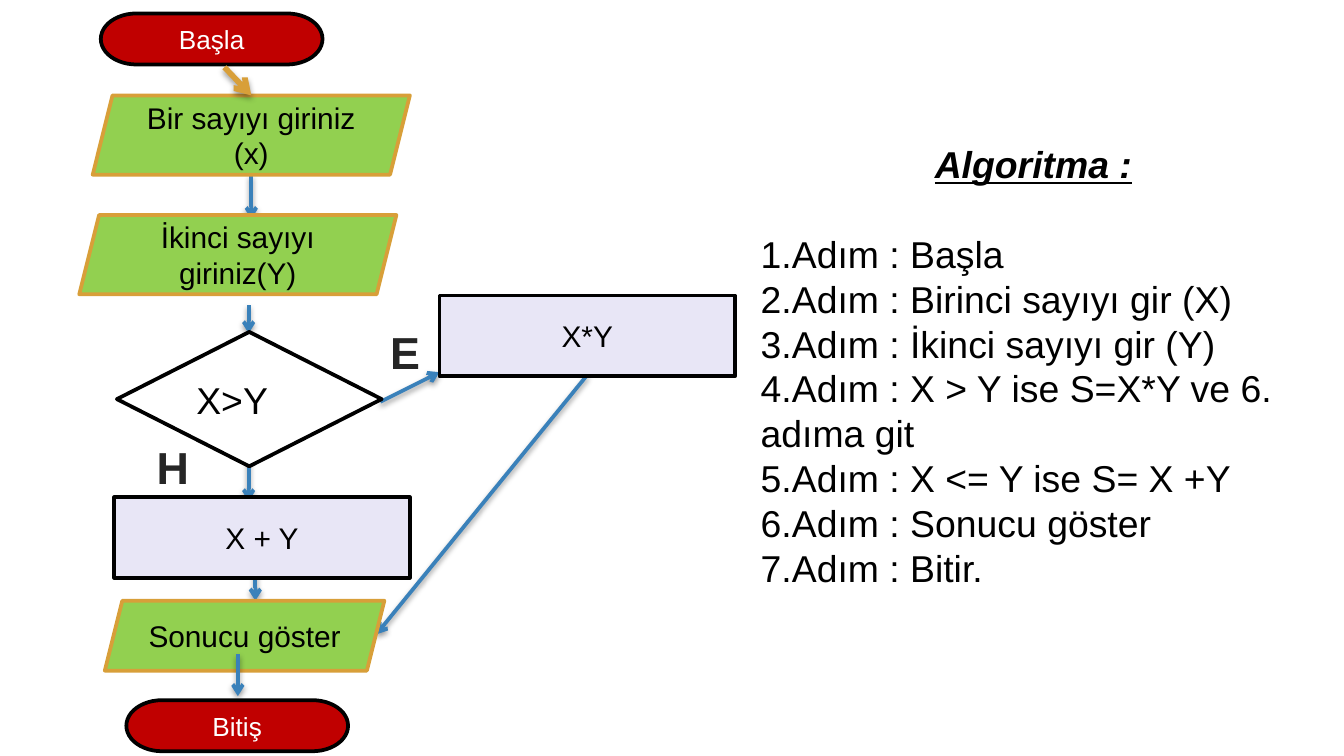
"""Build a flowchart slide that compares two numbers, with its algorithm beside it."""
from lxml import etree
from pptx import Presentation
from pptx.dml.color import RGBColor
from pptx.enum.shapes import MSO_CONNECTOR, MSO_SHAPE
from pptx.enum.text import MSO_ANCHOR, MSO_AUTO_SIZE, PP_ALIGN
from pptx.oxml.ns import qn
from pptx.util import Inches, Pt

LEFT, CENTER = PP_ALIGN.LEFT, PP_ALIGN.CENTER
TOP, MIDDLE = MSO_ANCHOR.TOP, MSO_ANCHOR.MIDDLE
STRAIGHT = MSO_CONNECTOR.STRAIGHT
NO_FIT = MSO_AUTO_SIZE.NONE
FONT = "Arial"
COLORS = {
    "white": "FFFFFF", "black": "000000", "red": "C00000", "green": "92D050",
    "gold": "D89F39", "lilac": "E8E6F6", "blue": "3A81BA", "label": "262626",
}

HEADING = "Algoritma :"
STEPS = [
    "1.Adım : Başla",
    "2.Adım : Birinci sayıyı gir (X)",
    "3.Adım : İkinci sayıyı gir (Y)",
    "4.Adım : X > Y ise S=X*Y ve 6. adıma git",
    "5.Adım : X <= Y ise S= X +Y",
    "6.Adım : Sonucu göster",
    "7.Adım : Bitir.",
]
STYLES = {
    "terminal": (MSO_SHAPE.FLOWCHART_TERMINATOR, "red", "black", "white", 14, CENTER, 0.1),
    "data": (MSO_SHAPE.PARALLELOGRAM, "green", "gold", "black", 16, CENTER, 0.08),
    "process": (MSO_SHAPE.RECTANGLE, "lilac", "black", "black", 16, CENTER, 0.1),
    "decision": (MSO_SHAPE.FLOWCHART_DECISION, "white", "black", "black", 20, LEFT, 0.1),
}
NODES = [
    ("terminal", "Başla", (0.75, 0.1, 1.65, 0.38)),
    ("data", "Bir sayıyı giriniz (x)", (0.69, 0.71, 2.36, 0.59)),
    ("data", "İkinci sayıyı giriniz(Y)", (0.59, 1.6, 2.36, 0.59)),
    ("decision", "X>Y", (0.87, 2.47, 1.97, 1)),
    ("process", "X*Y", (3.27, 2.2, 2.2, 0.6)),
    ("process", "X + Y", (0.85, 3.7, 2.2, 0.6)),
    ("data", "Sonucu göster", (0.78, 4.47, 2.08, 0.52)),
    ("terminal", "Bitiş", (0.94, 5.21, 1.65, 0.38)),
]
BRANCHES = [("H", (1.06, 3.22, 0.45, 0.5)), ("E", (2.8, 2.37, 0.43, 0.5))]
BACK_ARROWS = [
    ((1.87, 1.3), (1.87, 1.63), "blue", 2),
    ((1.85, 2.27), (1.85, 2.48), "blue", 2),
    ((2.83, 2.99), (3.27, 2.77), "blue", 2),
    ((1.85, 3.4), (1.85, 3.73), "blue", 2),
    ((1.9, 4.17), (1.9, 4.47), "blue", 2),
    ((4.37, 2.79), (2.8, 4.72), "blue", 2),
]
FRONT_ARROWS = [
    ((1.67, 0.5), (1.87, 0.71), "gold", 3),
    ((1.77, 4.87), (1.77, 5.18), "blue", 2),
]


def rgb(name):
    return RGBColor.from_string(COLORS[name])


def place(shape, area):
    shape.left, shape.top, shape.width, shape.height = map(Inches, area)


def write(frame, lines, size, color, align, anchor, wrap=True):
    frame.word_wrap = wrap
    frame.auto_size = NO_FIT
    frame.vertical_anchor = anchor
    for index, line in enumerate(lines):
        para = frame.add_paragraph() if index else frame.paragraphs[0]
        para.alignment = align
        para.space_before = Pt(0)
        span = para.add_run()
        span.text = line
        span.font.name = FONT
        span.font.size = Pt(size)
        span.font.color.rgb = rgb(color)


def add_node(slide, style, text, area):
    preset, fill, line, color, size, align, margin = STYLES[style]
    box = slide.shapes.add_shape(preset, *map(Inches, area))
    box.shadow.inherit = False
    box.fill.solid()
    box.fill.fore_color.rgb = rgb(fill)
    box.line.color.rgb = rgb(line)
    box.line.width = Pt(2)
    box.text_frame.margin_left = box.text_frame.margin_right = Inches(margin)
    write(box.text_frame, [text], size, color, align, MIDDLE)


def add_arrow(slide, start, end, color, width):
    arrow = slide.shapes.add_connector(STRAIGHT, *map(Inches, start + end))
    arrow.line.color.rgb = rgb(color)
    arrow.line.width = Pt(width)
    etree.SubElement(arrow.line._get_or_add_ln(), qn("a:tailEnd"), type="arrow")
    effects = etree.SubElement(arrow._element.spPr, qn("a:effectLst"))
    shadow = etree.SubElement(effects, qn("a:outerShdw"), blurRad=str(Pt(3.1)),
                              dist=str(Pt(1.6)), dir="5400000", rotWithShape="0")
    tint = etree.SubElement(shadow, qn("a:srgbClr"), val=COLORS["black"])
    etree.SubElement(tint, qn("a:alpha"), val="38000")


def add_algorithm(slide):
    title, body = slide.placeholders
    place(title, (5.56, 1, 4.26, 0.45))
    write(title.text_frame, [HEADING], 20, "black", CENTER, TOP)
    font = title.text_frame.paragraphs[0].runs[0].font
    font.bold = font.italic = font.underline = True

    place(body, (5.56, 1.67, 4.26, 2.8))
    write(body.text_frame, STEPS, 20, "black", LEFT, TOP)
    for para in body.text_frame.paragraphs:
        properties = para._p.get_or_add_pPr()
        properties.set("marL", "0")
        properties.set("indent", "0")
        etree.SubElement(properties, qn("a:buNone"))


def main():
    deck = Presentation()
    deck.slide_width = Inches(10)
    deck.slide_height = deck.slide_width * 9 // 16
    slide = deck.slides.add_slide(deck.slide_layouts[1])
    add_algorithm(slide)
    for arrow in BACK_ARROWS:
        add_arrow(slide, *arrow)
    for node in NODES:
        add_node(slide, *node)
    for arrow in FRONT_ARROWS:
        add_arrow(slide, *arrow)
    for text, area in BRANCHES:
        label = slide.shapes.add_textbox(*map(Inches, area))
        write(label.text_frame, [text], 24, "label", CENTER, TOP, wrap=False)
        label.text_frame.paragraphs[0].runs[0].font.bold = True
    deck.save("out.pptx")


if __name__ == "__main__":
    main()
